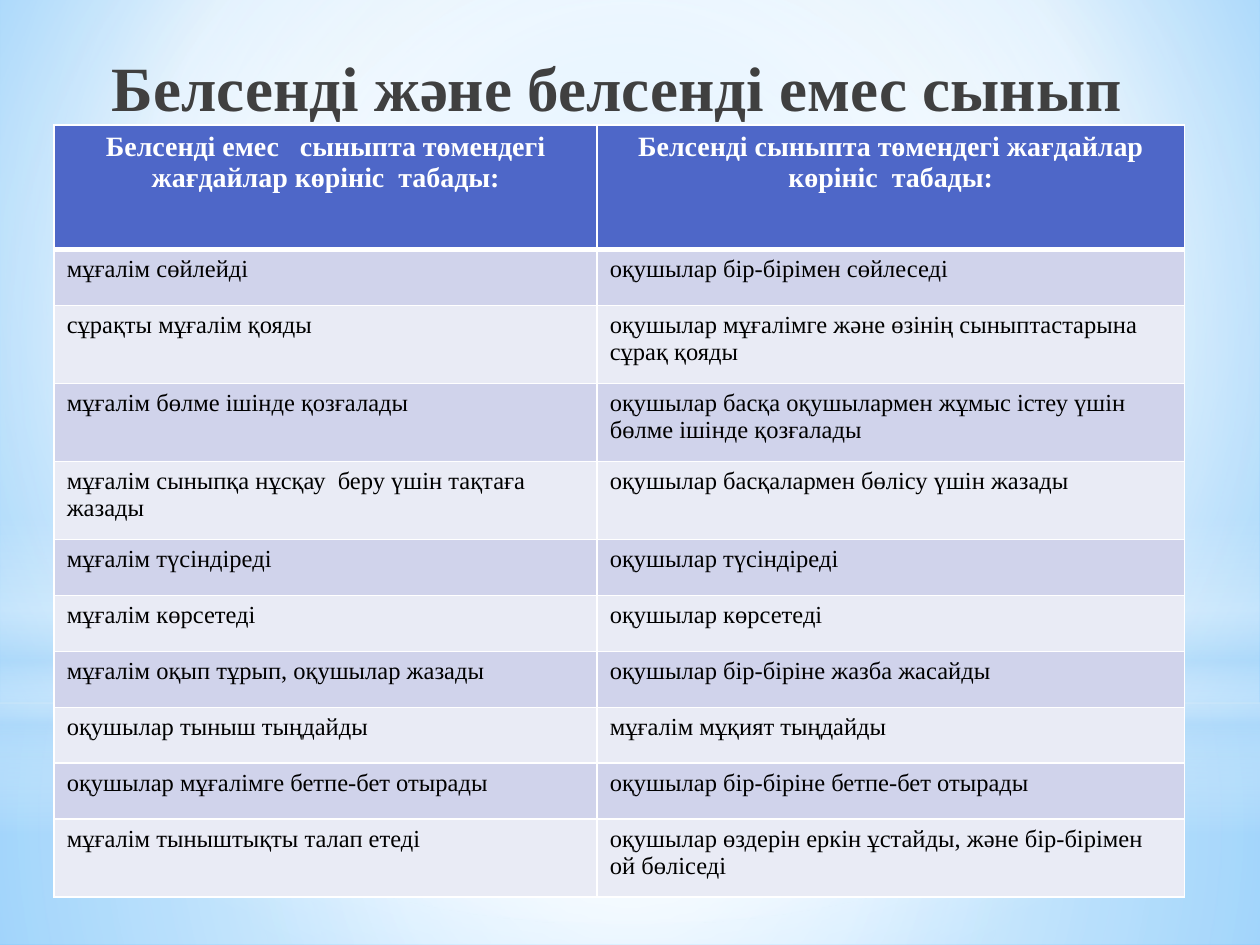
from lxml import etree
from pptx import Presentation
from pptx.dml.color import RGBColor
from pptx.enum.shapes import MSO_SHAPE as Shape
from pptx.enum.text import MSO_ANCHOR as Anchor, MSO_AUTO_SIZE as AutoSize, PP_ALIGN as Align
from pptx.oxml.ns import qn
from pptx.util import Inches, Pt

FONT = "Times New Roman"
COLORS = {
    "title": "404040", "header": "4E67C8", "odd": "D0D3EB", "even": "E9EBF5",
    "text": "000000", "white": "FFFFFF", "sky": "9ED5FF", "blue": "5BB9FF", "mist": "B4DCFA",
}

HEADING = "Белсенді және белсенді емес сынып"
HEADERS = (
    "Белсенді емес   сыныпта төмендегі жағдайлар көрініс  табады:",
    "Белсенді сыныпта төмендегі жағдайлар көрініс  табады:",
)
COMPARISONS = [
    ("мұғалім сөйлейді", "оқушылар бір-бірімен сөйлеседі"),
    ("сұрақты мұғалім қояды", "оқушылар мұғалімге және өзінің сыныптастарына сұрақ қояды"),
    ("мұғалім бөлме ішінде қозғалады",
     "оқушылар басқа оқушылармен жұмыс істеу үшін бөлме ішінде қозғалады"),
    ("мұғалім сыныпқа нұсқау  беру үшін тақтаға жазады",
     "оқушылар басқалармен бөлісу үшін жазады"),
    ("мұғалім түсіндіреді", "оқушылар түсіндіреді"),
    ("мұғалім көрсетеді", "оқушылар көрсетеді"),
    ("мұғалім оқып тұрып, оқушылар жазады", "оқушылар бір-біріне жазба жасайды"),
    ("оқушылар тыныш тыңдайды", "мұғалім мұқият тыңдайды"),
    ("оқушылар мұғалімге бетпе-бет отырады", "оқушылар бір-біріне бетпе-бет отырады"),
    ("мұғалім тыныштықты талап етеді",
     "оқушылар өздерін еркін ұстайды, және бір-бірімен ой бөліседі"),
]
COLUMN_WIDTHS = (4.31, 4.66)
HEADER_HEIGHT, SHORT_ROW, TALL_ROW = 0.99, 0.444, 0.62
WRAP_LENGTH = 45

CENTER = (50, 50, 50, 50)
SKY_STOPS = [(0, "sky", 100), (60, "white", 100), (100, "blue", 100)]
BACKDROP = [
    (Shape.RECTANGLE, 5.58, 1.92, CENTER,
     [(0, "white", 91), (37, "white", 76), (100, "mist", 79)]),
    (Shape.RECTANGLE, 0, 5.58, CENTER,
     [(0, "white", 89), (48, "white", 62), (100, "mist", 79)]),
    (Shape.RECTANGLE, 4.12, 2.5, None,
     [(0, "white", 0), (29, "white", 30), (45, "mist", 40), (55, "white", 26),
      (65, "mist", 60), (100, "white", 0)]),
    (Shape.OVAL, 1.75, 5.58, CENTER, [(0, "white", 100), (56, "white", 0)]),
]


def add(parent, tag, **attributes):
    return etree.SubElement(parent, qn(tag), {k: str(v) for k, v in attributes.items()})


def color(name):
    return RGBColor.from_string(COLORS[name])


def set_gradient(fill, owner, stops, focus):
    fill.solid()
    solid = owner.find(".//" + qn("a:solidFill"))
    gradient = etree.Element(qn("a:gradFill"), rotWithShape="1")
    stop_list = add(gradient, "a:gsLst")
    for position, name, opacity in stops:
        stop = add(stop_list, "a:gs", pos=position * 1000)
        add(add(stop, "a:srgbClr", val=COLORS[name]), "a:alpha", val=opacity * 1000)
    if focus:
        circle = add(gradient, "a:path", path="circle")
        add(circle, "a:fillToRect", **{side: v * 1000 for side, v in zip("ltrb", focus)})
    else:
        add(gradient, "a:lin", ang=90 * 60000, scaled=0)
    solid.getparent().replace(solid, gradient)


def add_borders(cell, row):
    properties = cell._tc.get_or_add_tcPr()
    thick_side = {0: "B", 1: "T"}.get(row)
    for side in "LRTB":
        width = 3 if side == thick_side else 1
        line = add(properties, "a:ln" + side, w=Pt(width))
        add(add(line, "a:solidFill"), "a:srgbClr", val=COLORS["white"])


def style_text(paragraph, size, color_name, bold, align):
    paragraph.alignment = align
    for run in paragraph.runs:
        run.font.name = FONT
        run.font.size = Pt(size)
        run.font.bold = bold
        run.font.color.rgb = color(color_name)


def add_backdrop(slide):
    set_gradient(slide.background.fill, slide.element, SKY_STOPS, (20, 10, 20, 60))
    for kind, top, height, focus, stops in BACKDROP:
        glow = slide.shapes.add_shape(kind, 0, Inches(top), Inches(10), Inches(height))
        glow.shadow.inherit = False
        glow.line.fill.background()
        set_gradient(glow.fill, glow.element, stops, focus)


def add_heading(slide):
    heading = slide.shapes.title
    slide.shapes.element.append(heading.element)
    heading.left, heading.top = Inches(0.51), Inches(0.29)
    heading.width, heading.height = Inches(8.5), Inches(0.87)
    frame = heading.text_frame
    frame.text = HEADING
    frame.word_wrap = True
    frame.auto_size = AutoSize.NONE
    frame.vertical_anchor = Anchor.MIDDLE
    frame.paragraphs[0].line_spacing = 0.9
    style_text(frame.paragraphs[0], 36, "title", True, Align.RIGHT)


def add_comparison(slide):
    heights = [HEADER_HEIGHT] + [
        TALL_ROW if max(map(len, pair)) > WRAP_LENGTH else SHORT_ROW for pair in COMPARISONS
    ]
    table = slide.shapes.add_table(
        len(heights), len(HEADERS), Inches(0.43), Inches(0.99),
        Inches(sum(COLUMN_WIDTHS)), Inches(sum(heights))).table
    for column, width in zip(table.columns, COLUMN_WIDTHS):
        column.width = Inches(width)
    for r, (texts, height) in enumerate(zip([HEADERS] + COMPARISONS, heights)):
        table.rows[r].height = Inches(height)
        for c, text in enumerate(texts):
            cell = table.cell(r, c)
            add_borders(cell, r)
            cell.fill.solid()
            cell.fill.fore_color.rgb = color("header" if r == 0 else "odd" if r % 2 else "even")
            cell.text_frame.text = text
            paragraph = cell.text_frame.paragraphs[0]
            if r == 0:
                style_text(paragraph, 16, "white", True, Align.CENTER)
            else:
                style_text(paragraph, 14, "text", False, Align.LEFT)


def main():
    deck = Presentation()
    deck.slide_width, deck.slide_height = Inches(10), Inches(7.5)
    slide = deck.slides.add_slide(deck.slide_layouts[5])
    add_backdrop(slide)
    add_heading(slide)
    add_comparison(slide)
    deck.save("out.pptx")


if __name__ == "__main__":
    main()
